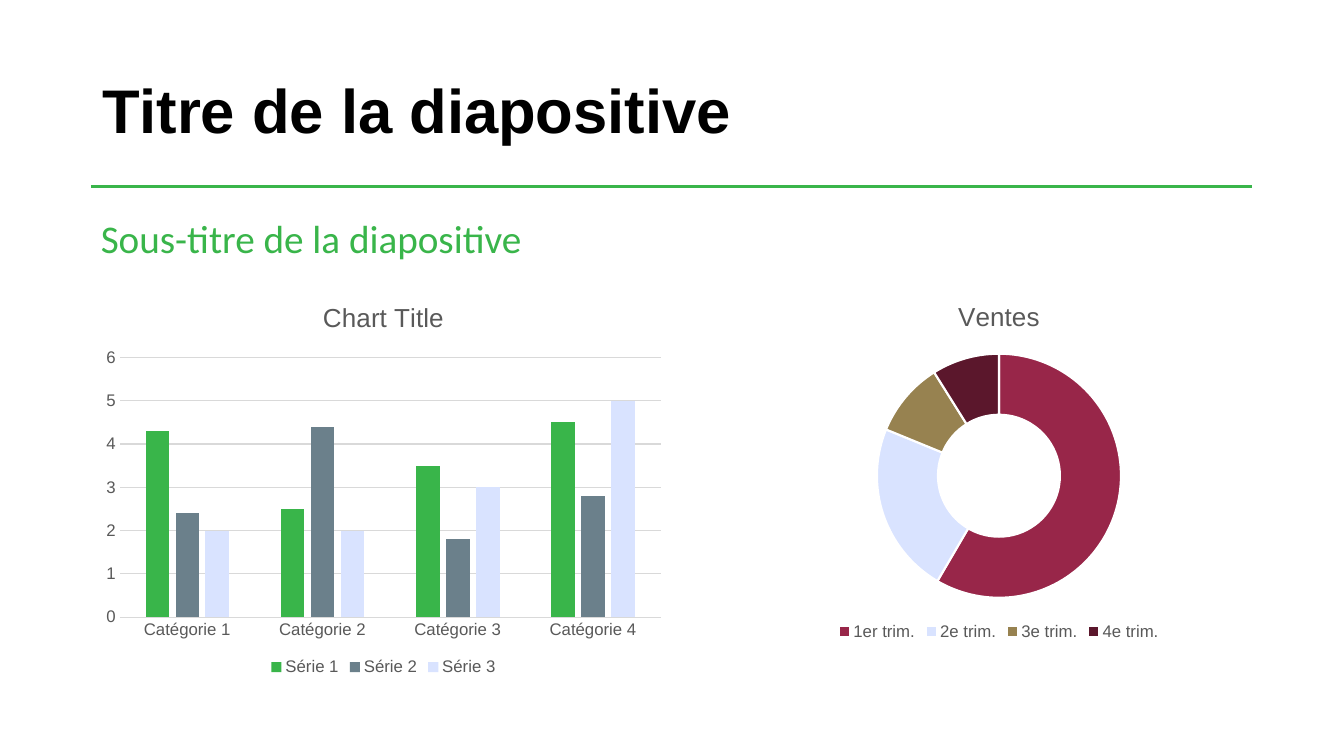
from dataclasses import dataclass

from lxml import etree
from pptx import Presentation
from pptx.chart.data import CategoryChartData
from pptx.dml.color import RGBColor
from pptx.enum.chart import XL_CHART_TYPE, XL_LEGEND_POSITION, XL_TICK_MARK
from pptx.enum.shapes import MSO_CONNECTOR
from pptx.enum.text import MSO_ANCHOR, MSO_AUTO_SIZE, PP_ALIGN
from pptx.oxml.ns import qn
from pptx.util import Cm, Pt

COLUMNS = XL_CHART_TYPE.COLUMN_CLUSTERED
DOUGHNUT = XL_CHART_TYPE.DOUGHNUT
LEGEND_BOTTOM = XL_LEGEND_POSITION.BOTTOM
NO_TICK = XL_TICK_MARK.NONE
STRAIGHT = MSO_CONNECTOR.STRAIGHT
TOP, MIDDLE = MSO_ANCHOR.TOP, MSO_ANCHOR.MIDDLE
NO_AUTOFIT = MSO_AUTO_SIZE.NONE
LEFT = PP_ALIGN.LEFT


@dataclass(frozen=True)
class Theme:
    """Colours, fonts and type sizes of the slide."""

    heading_font: str = "Arial"
    body_font: str = "Calibri"
    black: str = "000000"
    white: str = "FFFFFF"
    green: str = "39B54A"
    chart_text: str = "595959"
    grid: str = "D9D9D9"
    series: tuple = ("39B54A", "6B808B", "D9E3FF")
    quarters: tuple = ("982649", "D9E3FF", "978250", "5B172C")
    title_size: float = 44
    subtitle_size: float = 28
    chart_title_size: float = 18.6
    label_size: float = 12


@dataclass(frozen=True)
class Box:
    """A region of the slide, in centimetres."""

    left: float
    top: float
    width: float
    height: float

    def lengths(self):
        """Return left, top, width and height as slide lengths."""
        return Cm(self.left), Cm(self.top), Cm(self.width), Cm(self.height)


THEME = Theme()


def style_font(font, name, size, color, bold=False):
    """Set the face, size, colour and weight of a font."""
    font.name = name
    font.size = Pt(size)
    font.bold = bold
    font.color.rgb = RGBColor.from_string(color)


def fill_solid(fill, color):
    """Fill with one colour."""
    fill.solid()
    fill.fore_color.rgb = RGBColor.from_string(color)


def style_line(line, color, width):
    """Draw a line in one colour and width."""
    fill_solid(line.fill, color)
    line.width = Pt(width)


def write_text(shape, box, text, anchor, *font_style):
    """Place a shape in its box and write one left-aligned paragraph."""
    shape.left, shape.top, shape.width, shape.height = box.lengths()
    frame = shape.text_frame
    frame.text = text
    frame.word_wrap = True
    frame.auto_size = NO_AUTOFIT
    frame.vertical_anchor = anchor
    paragraph = frame.paragraphs[0]
    paragraph.alignment = LEFT
    paragraph.line_spacing = 0.9
    style_font(paragraph.runs[0].font, *font_style)


def add_heading(slide, box):
    """Write the title in its box, with a green rule along the foot."""
    write_text(slide.shapes.title, box, "Titre de la diapositive", MIDDLE,
               THEME.heading_font, THEME.title_size, THEME.black, True)
    left, top, width, height = box.lengths()
    start, foot = left - Cm(0.05), top + height
    rule = slide.shapes.add_connector(
        STRAIGHT, start, foot, start + width + Cm(0.05), foot)
    style_line(rule.line, THEME.green, 2.25)
    etree.SubElement(rule._element.spPr, qn("a:effectLst"))


def add_subtitle(slide, box):
    """Write the green subtitle at the top of the content area."""
    write_text(slide.shapes.add_textbox(*box.lengths()), box,
               "Sous-titre de la diapositive", TOP,
               THEME.body_font, THEME.subtitle_size, THEME.green)


def add_titled_chart(slide, box, kind, title, categories, series):
    """Add a chart with a title and a legend below, and return it."""
    data = CategoryChartData()
    data.categories = categories
    for name, values in series.items():
        data.add_series(name, values)
    chart = slide.shapes.add_chart(kind, *box.lengths(), data).chart
    style_font(chart.font, THEME.heading_font, THEME.label_size, THEME.chart_text)
    chart.has_title = True
    chart.chart_title.include_in_layout = False
    frame = chart.chart_title.text_frame
    frame.text = title
    style_font(frame.paragraphs[0].runs[0].font, THEME.heading_font,
               THEME.chart_title_size, THEME.chart_text)
    chart.has_legend = True
    chart.legend.position = LEGEND_BOTTOM
    chart.legend.include_in_layout = False
    style_font(chart.legend.font, THEME.heading_font, THEME.label_size,
               THEME.chart_text)
    return chart


def add_column_chart(slide, box):
    """Add the clustered columns comparing three series."""
    chart = add_titled_chart(
        slide, box, COLUMNS, "Chart Title",
        [f"Catégorie {number}" for number in range(1, 5)],
        {"Série 1": (4.3, 2.5, 3.5, 4.5),
         "Série 2": (2.4, 4.4, 1.8, 2.8),
         "Série 3": (2, 2, 3, 5)})
    plot = chart.plots[0]
    plot.vary_by_categories = False
    plot.gap_width, plot.overlap = 219, -27
    for series, color in zip(plot.series, THEME.series):
        fill_solid(series.format.fill, color)
    for axis in (chart.category_axis, chart.value_axis):
        axis.major_tick_mark = axis.minor_tick_mark = NO_TICK
        style_font(axis.tick_labels.font, THEME.heading_font, THEME.label_size,
                   THEME.chart_text)
    style_line(chart.category_axis.format.line, THEME.grid, 0.75)
    value_axis = chart.value_axis
    value_axis.minimum_scale, value_axis.maximum_scale = 0, 6
    value_axis.major_unit = 1
    value_axis.format.line.fill.background()
    style_line(value_axis.major_gridlines.format.line, THEME.grid, 0.75)


def add_sales_ring(slide, box):
    """Add the doughnut of sales by quarter."""
    chart = add_titled_chart(
        slide, box, DOUGHNUT, "Ventes",
        ["1er trim.", "2e trim.", "3e trim.", "4e trim."],
        {"Ventes": (59, 23, 10, 9)})
    plot = chart.plots[0]
    plot.vary_by_categories = True
    for index, color in enumerate(THEME.quarters):
        point_format = plot.series[0].points[index].format
        fill_solid(point_format.fill, color)
        style_line(point_format.line, THEME.white, 1.5)
    next(chart._chartSpace.iter(qn("c:holeSize"))).set("val", "75")


def main():
    """Build the slide and save it."""
    presentation = Presentation()
    presentation.slide_width, presentation.slide_height = Cm(33.87), Cm(19.05)
    slide = presentation.slides.add_slide(presentation.slide_layouts[5])
    fill_solid(slide.background.fill, THEME.white)
    add_heading(slide, Box(2.34, 1.02, 29.21, 3.68))
    add_subtitle(slide, Box(2.29, 5.41, 29.21, 11.73))
    add_column_chart(slide, Box(2.39, 7.11, 14.55, 10.03))
    add_sales_ring(slide, Box(18.75, 7.11, 12.85, 9.14))
    presentation.save("out.pptx")


if __name__ == "__main__":
    main()
